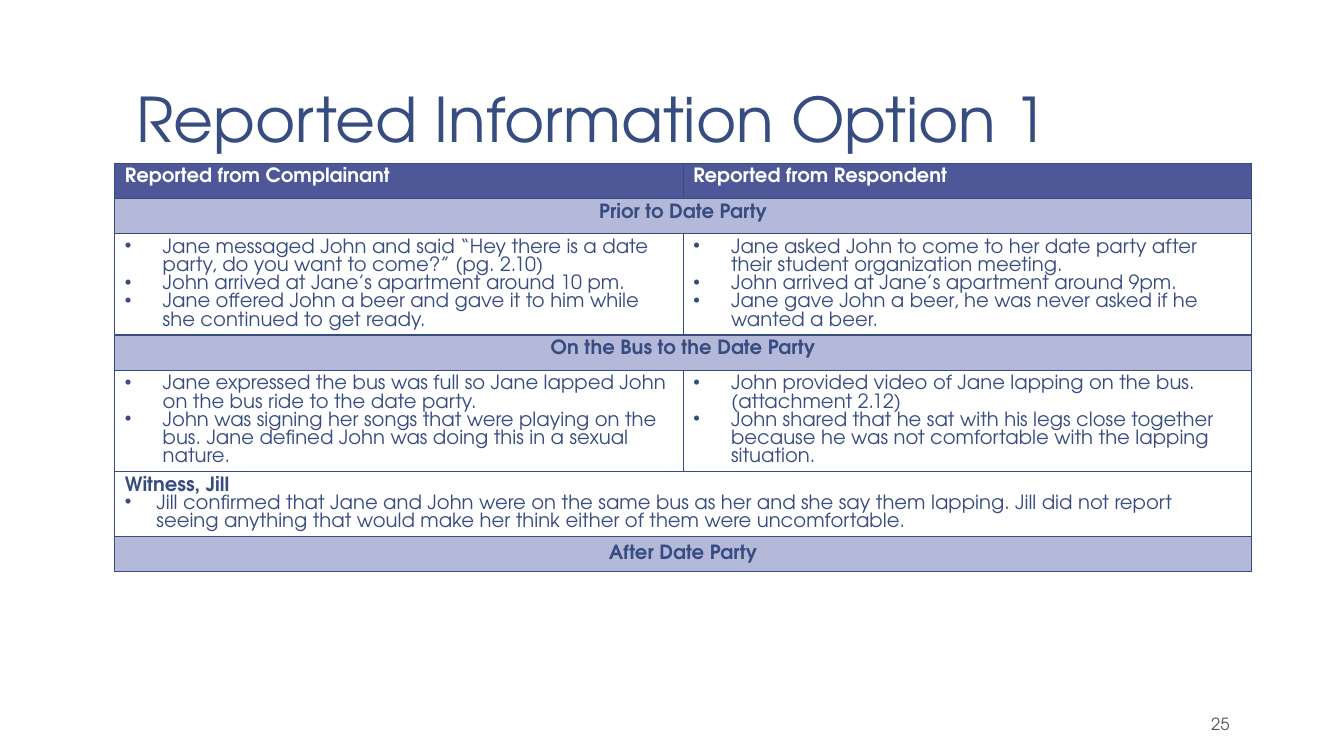
import pptx
import pptx.util
import pptx.dml.color
import pptx.enum.text
import pptx.oxml
import pptx.oxml.ns

Pt = pptx.util.Pt
RGBColor = pptx.dml.color.RGBColor
ALIGN = pptx.enum.text.PP_ALIGN
ANCHOR = pptx.enum.text.MSO_ANCHOR

NAVY = RGBColor(0x37, 0x4C, 0x81)
HEAD = RGBColor(0x4E, 0x57, 0x98)
BAND = RGBColor(0xB5, 0xB9, 0xD9)
WHITE = RGBColor(0xFF, 0xFF, 0xFF)
GREY = RGBColor(0x59, 0x59, 0x59)

FACE = "TeX Gyre Adventor"
LINE = Pt(13)
WIDE, SLIM = 27, 22.5  # hanging indents of the bullets

# Each row: kind, height, contents
ROWS = [
    ("head", 25.2, ["Reported from Complainant", "Reported from Respondent"]),
    ("band", 25.2, "Prior to Date Party"),
    ("pair", 72.2, [
        ["Jane messaged John and said “Hey there is a date party, do you want to come?” (pg. 2.10)",
         "John arrived at Jane’s apartment around 10 pm.",
         "Jane offered John a beer and gave it to him while she continued to get ready."],
        ["Jane asked John to come to her date party after their student organization meeting.",
         "John arrived at Jane’s apartment around 9pm.",
         "Jane gave John a beer, he was never asked if he wanted a beer."]]),
    ("band", 25.2, "On the Bus to the Date Party"),
    ("pair", 72.2, [
        ["Jane expressed the bus was full so Jane lapped John on the bus ride to the date party.",
         "John was signing her songs that were playing on the bus. "
         "Jane defined John was doing this in a sexual nature."],
        ["John provided video of Jane lapping on the bus. (attachment 2.12)",
         "John shared that he sat with his legs close together because he was not "
         "comfortable with the lapping situation."]]),
    ("note", 46.2, ["Witness, Jill",
                    "Jill confirmed that Jane and John were on the same bus as her and she say "
                    "them lapping. Jill did not report seeing anything that would make her think "
                    "either of them were uncomfortable."]),
    ("last", 25.2, "After Date Party"),
]


def style(item, form):
    for key, value in form.items():
        setattr(item, key, value)


def write(para, text, size, color, bold=False, **form):
    style(para, form)
    run = para.add_run()
    run.text = text
    style(run.font, {"name": FACE, "size": Pt(size), "bold": bold})
    run.font.color.rgb = color


def label(slide, place, text, size, color, **form):
    frame = slide.shapes.add_textbox(*map(Pt, place)).text_frame
    style(frame, {"word_wrap": True, "vertical_anchor": ANCHOR.BOTTOM,
                  "margin_left": Pt(9.4), "margin_right": Pt(9.4),
                  "margin_top": Pt(5), "margin_bottom": Pt(5)})
    write(frame.paragraphs[0], text, size, color, **form)


def bullet(para, indent):
    props = para._p.get_or_add_pPr()
    props.set("marL", str(Pt(indent)))
    props.set("indent", str(-Pt(indent)))
    mark = pptx.oxml.parse_xml(
        f'<a:buChar {pptx.oxml.ns.nsdecls("a")} char="•"/>')
    props.append(mark)


def border(cell):
    props = cell._tc.get_or_add_tcPr()
    for side in "LRTB":
        props.append(pptx.oxml.parse_xml(
            f'<a:ln{side} {pptx.oxml.ns.nsdecls("a")} w="{Pt(1)}"><a:solidFill>'
            f'<a:srgbClr val="{NAVY}"/></a:solidFill></a:ln{side}>'))


def paint(cell, color=None):
    if color is None:
        cell.fill.background()
    else:
        cell.fill.solid()
        cell.fill.fore_color.rgb = color


def heading(cell, text, color=NAVY, align=ALIGN.LEFT):
    write(cell.text_frame.paragraphs[0], text, 14, color, True,
          alignment=align, line_spacing=LINE)


def points(cell, texts, indent, fresh=True):
    frame = cell.text_frame
    for text in texts:
        para = frame.paragraphs[0] if fresh else frame.add_paragraph()
        fresh = False
        bullet(para, indent)
        write(para, text, 14, NAVY, line_spacing=LINE)


def fill_row(cells, kind, data):
    left, right = cells
    for cell in cells:
        border(cell)
        paint(cell, {"head": HEAD, "band": BAND, "last": BAND}.get(kind))
    if kind == "head":
        for cell, text in zip(cells, data):
            heading(cell, text, WHITE)
    elif kind == "pair":
        for cell, texts in zip(cells, data):
            points(cell, texts, WIDE)
    else:
        left.merge(right)
        if kind == "note":
            heading(left, data[0])
            points(left, data[1:], SLIM, fresh=False)
        else:
            heading(left, data, align=ALIGN.CENTER)
            if kind == "last":
                left.vertical_anchor = ANCHOR.MIDDLE


def grid(slide):
    high = sum(row[1] for row in ROWS)
    table = slide.shapes.add_table(
        len(ROWS), 2, Pt(82), Pt(116.6), Pt(812), Pt(high)).table
    style(table, {"first_row": False, "horz_banding": False})
    for row, (kind, tall, data) in zip(table.rows, ROWS):
        row.height = Pt(tall)
        fill_row(list(row.cells), kind, data)


def main():
    deck = pptx.Presentation()
    style(deck, {"slide_width": Pt(960), "slide_height": Pt(540)})
    slide = deck.slides.add_slide(deck.slide_layouts[6])
    # Title
    label(slide, (87.8, 5.8, 800, 110.2), "Reported Information Option 1", 44, NAVY,
          line_spacing=0.85)
    # Table of accounts
    grid(slide)
    # Page number
    label(slide, (800.6, 504, 87.1, 25.2), "25", 12, GREY, alignment=ALIGN.RIGHT)
    deck.save("out.pptx")


if __name__ == "__main__":
    main()
